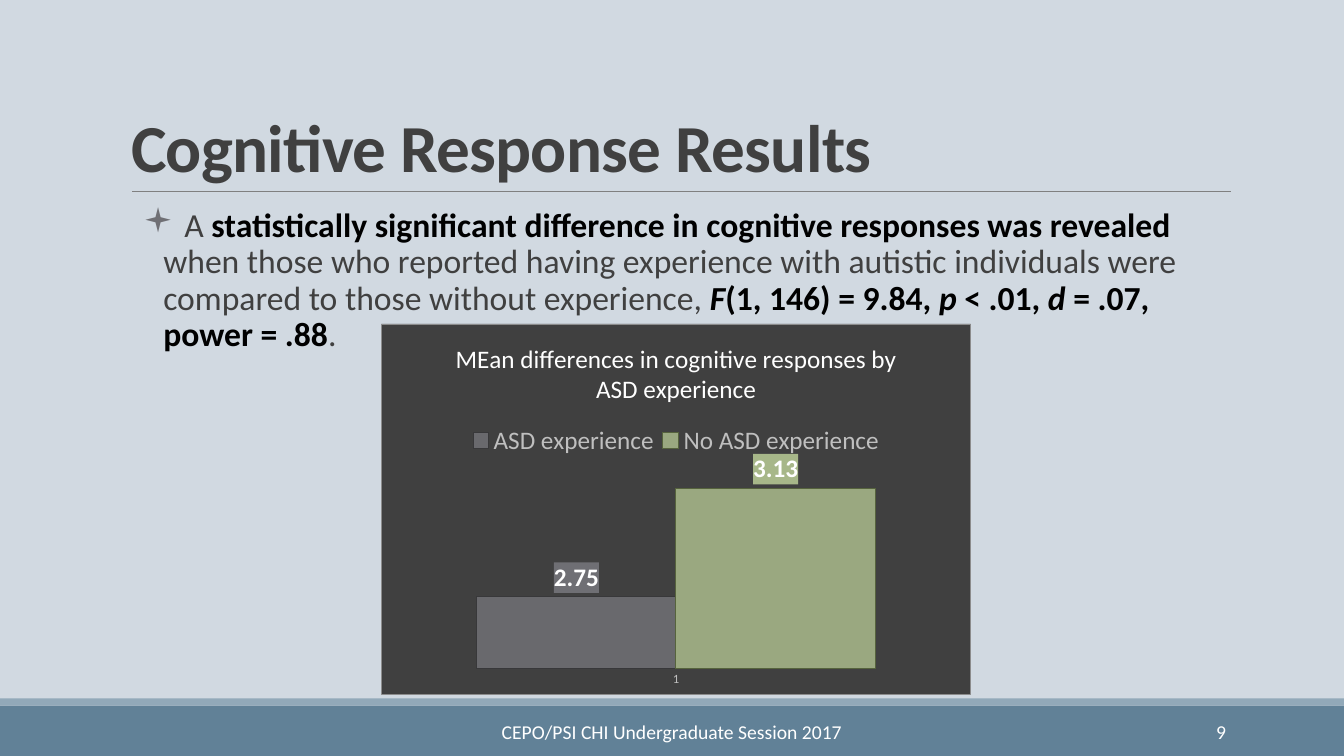
import pptx
import pptx.chart.data
import pptx.dml.color
import pptx.enum.chart
import pptx.enum.shapes
import pptx.enum.text
import pptx.oxml
import pptx.oxml.ns
import pptx.util
from pptx.util import Inches, Pt

FONT = "Calibri"
DARK, BLACK, WHITE, PALE = "404040", "000000", "FFFFFF", "BFBFBF"
BACKGROUND = "D1D9E1"
TITLE = "Cognitive Response Results"
PLAIN = {"color": DARK}
STRONG = {"color": BLACK, "bold": True}
STRONG_ITALIC = {**STRONG, "italic": True}
FINDING = [
    (" A ", PLAIN),
    ("statistically significant difference in cognitive responses was revealed ", STRONG),
    ("when those who reported having experience with autistic individuals were "
     "compared to those without experience, ", PLAIN),
    ("F", STRONG_ITALIC),
    ("(1, 146) = 9.84, ", STRONG),
    ("p ", STRONG_ITALIC),
    ("< .01, ", STRONG),
    ("d", STRONG_ITALIC),
    (" = .07, power = .88", STRONG),
    (".", PLAIN),
]
BANDS = [((0, 7, 13.33, 0.5), "618197"), ((0, 6.93, 13.33, 0.07), "92A9B9")]
ALIGN = pptx.enum.text.PP_ALIGN
FOOTERS = [
    ("CEPO/PSI CHI Undergraduate Session 2017", (4.03, 7.06, 5.27, 0.4), ALIGN.CENTER),
    ("9", (10.83, 7.06, 1.43, 0.4), ALIGN.RIGHT),
]
CHART_TITLE = "MEan differences in cognitive responses by ASD experience"
GROUPS = [  # name, mean, fill, outline
    ("ASD experience", 2.75, "6F6F74", "38383A"),
    ("No ASD experience", 3.13, "A7B789", "56633D"),
]
NS = pptx.oxml.ns.nsdecls("a", "c")


def rgb(value):
    return pptx.dml.color.RGBColor.from_string(value)


def box(lengths):
    return [Inches(length) for length in lengths]


def set_font(font, size, color, bold=False, italic=False):
    values = {"name": FONT, "size": Pt(size), "bold": bold, "italic": italic}
    for key, value in values.items():
        setattr(font, key, value)
    font.color.rgb = rgb(color)


def place(shape, lengths):
    for key, value in zip(("left", "top", "width", "height"), box(lengths)):
        setattr(shape, key, value)


def set_frame(frame, **values):
    values = {"word_wrap": True, "auto_size": pptx.enum.text.MSO_AUTO_SIZE.NONE, **values}
    for key, value in values.items():
        setattr(frame, key, value)


def manual_layout(x, y, w, h, inner=False):
    """Return a c:layout element in fractions of the chart area."""
    target = '<c:layoutTarget val="inner"/>' if inner else ""
    sizes = "".join(f'<c:{key} val="{value}"/>' for key, value in zip("xywh", (x, y, w, h)))
    return pptx.oxml.parse_xml(
        f'<c:layout {NS}><c:manualLayout>{target}<c:xMode val="edge"/>'
        f'<c:yMode val="edge"/>{sizes}</c:manualLayout></c:layout>')


def area_format(fill, alpha=100, line=None):
    """Return a c:spPr element with a solid fill and an optional hairline."""
    outline = (f'<a:ln w="6350"><a:solidFill><a:srgbClr val="{line}"/></a:solidFill></a:ln>'
               if line else "")
    return pptx.oxml.parse_xml(
        f'<c:spPr {NS}><a:solidFill><a:srgbClr val="{fill}"><a:alpha val="{alpha * 1000}"/>'
        f'</a:srgbClr></a:solidFill>{outline}</c:spPr>')


def add_template_parts(slide):
    slide.background.fill.solid()
    slide.background.fill.fore_color.rgb = rgb(BACKGROUND)
    for lengths, color in BANDS:
        band = slide.shapes.add_shape(pptx.enum.shapes.MSO_SHAPE.RECTANGLE, *box(lengths))
        band.shadow.inherit = False
        band.fill.solid()
        band.fill.fore_color.rgb = rgb(color)
        band.line.fill.background()
    rule = slide.shapes.add_connector(
        pptx.enum.shapes.MSO_CONNECTOR.STRAIGHT, *box((1.31, 1.9, 12.21, 1.9)))
    rule.line.color.rgb = rgb("808080")
    rule.line.width = Pt(0.5)
    rule._element.spPr.append(pptx.oxml.parse_xml(f"<a:effectLst {NS}/>"))
    for text, lengths, alignment in FOOTERS:
        frame = slide.shapes.add_textbox(*box(lengths)).text_frame
        set_frame(frame, vertical_anchor=pptx.enum.text.MSO_ANCHOR.MIDDLE)
        paragraph = frame.paragraphs[0]
        paragraph.alignment = alignment
        run = paragraph.add_run()
        run.text = text
        set_font(run.font, 14, WHITE)


def fill_title(title):
    place(title, (1.2, 0.31, 11, 1.59))
    set_frame(title.text_frame, vertical_anchor=pptx.enum.text.MSO_ANCHOR.BOTTOM)
    paragraph = title.text_frame.paragraphs[0]
    paragraph.alignment = ALIGN.LEFT
    paragraph.line_spacing = 0.85
    run = paragraph.add_run()
    run.text = TITLE
    set_font(run.font, 48, DARK, bold=True)
    run.font._element.set("spc", "-50")


def fill_finding(body):
    place(body, (1.2, 2.02, 11, 4.4))
    set_frame(body.text_frame, margin_left=0, margin_right=0)
    paragraph = body.text_frame.paragraphs[0]
    spacing = {"line_spacing": 0.9, "space_before": Pt(2), "space_after": Pt(4)}
    for key, value in spacing.items():
        setattr(paragraph, key, value)
    properties = paragraph._p.get_or_add_pPr()
    properties.set("marL", str(Inches(0.42)))
    properties.set("indent", str(Inches(-0.2)))
    for bullet in ('<a:buClr {}><a:srgbClr val="6F6F74"/></a:buClr>',
                   '<a:buFont {} typeface="Wingdings" charset="2"/>',
                   '<a:buChar {} char="▪"/>'):
        properties.append(pptx.oxml.parse_xml(bullet.format(NS)))
    for text, style in FINDING:
        run = paragraph.add_run()
        run.text = text
        set_font(run.font, 24, **style)


def add_means_chart(slide):
    means = pptx.chart.data.CategoryChartData(number_format="0.00")
    means.categories = ["1"]
    for name, mean, _, _ in GROUPS:
        means.add_series(name, [mean])
    kinds = pptx.enum.chart
    chart = slide.shapes.add_chart(
        kinds.XL_CHART_TYPE.COLUMN_CLUSTERED, *box((3.78, 3.21, 5.85, 3.68)), means).chart
    set_font(chart.font, 10, BLACK)
    space = chart._chartSpace
    space.chart.addnext(area_format(DARK, line="8C8C8C"))

    heading = chart.chart_title.text_frame.paragraphs[0].add_run()
    heading.text = CHART_TITLE
    set_font(heading.font, 18, WHITE)
    chart.chart_title.include_in_layout = False

    chart.has_legend = True
    chart.legend.position = kinds.XL_LEGEND_POSITION.TOP
    chart.legend.include_in_layout = False
    set_font(chart.legend.font, 18, PALE)
    legend_position = chart.legend._element.find(pptx.oxml.ns.qn("c:legendPos"))
    legend_position.addnext(manual_layout(0.14, 0.27, 0.72, 0.09))

    plot_area = space.chart.plotArea
    for layout in plot_area.findall(pptx.oxml.ns.qn("c:layout")):
        plot_area.remove(layout)
    plot_area.insert(0, manual_layout(0.02, 0.39, 0.96, 0.54, inner=True))

    categories, scale = chart.category_axis, chart.value_axis
    categories.major_tick_mark = kinds.XL_TICK_MARK.NONE
    categories.format.line.fill.background()
    set_font(categories.tick_labels.font, 9, PALE)
    scale_values = {"visible": False, "has_major_gridlines": False,
                    "minimum_scale": 2.5, "maximum_scale": 3.2}
    for key, value in scale_values.items():
        setattr(scale, key, value)

    plot = chart.plots[0]
    for key, value in {"gap_width": 84, "overlap": 0, "vary_by_categories": False}.items():
        setattr(plot, key, value)
    for series, (_, _, fill, outline) in zip(plot.series, GROUPS):
        series.format.fill.solid()
        series.format.fill.fore_color.rgb = rgb(fill)
        color = series._element.spPr.find(".//" + pptx.oxml.ns.qn("a:srgbClr"))
        color.append(pptx.oxml.parse_xml(f'<a:alpha {NS} val="88000"/>'))
        series.format.line.color.rgb = rgb(outline)
        series.format.line.width = Pt(0.75)
        labels = series.data_labels
        labels.show_value = True
        labels.position = kinds.XL_LABEL_POSITION.OUTSIDE_END
        set_font(labels.font, 18, WHITE, bold=True)
        text_format = labels._element.find(pptx.oxml.ns.qn("c:txPr"))
        text_format.addprevious(area_format(fill))


def main():
    deck = pptx.Presentation()
    deck.slide_width, deck.slide_height = Inches(13.33), Inches(7.5)
    slide = deck.slides.add_slide(deck.slide_layouts[1])
    add_template_parts(slide)
    fill_title(slide.shapes.title)
    fill_finding(slide.placeholders[1])
    add_means_chart(slide)
    deck.save("out.pptx")


if __name__ == "__main__":
    main()
